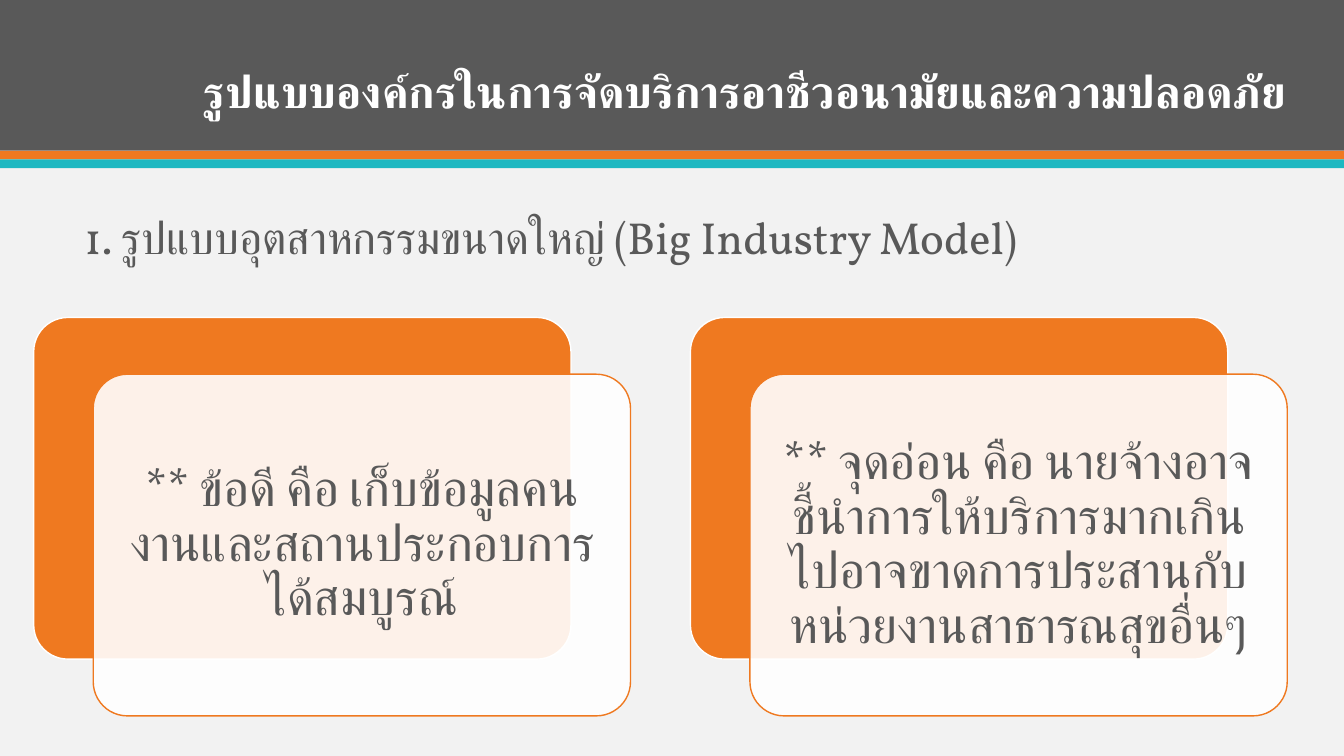
from dataclasses import dataclass

import pptx
import pptx.dml.color
import pptx.enum.shapes
import pptx.enum.text
import pptx.oxml
import pptx.oxml.ns
import pptx.util

Cm = pptx.util.Cm
Pt = pptx.util.Pt
Shape = pptx.enum.shapes.MSO_SHAPE
Align = pptx.enum.text.PP_ALIGN
Anchor = pptx.enum.text.MSO_ANCHOR


@dataclass(frozen=True)
class Theme:
    background: str = "F2F2F2"
    dark: str = "595959"
    orange: str = "EF7920"
    teal: str = "1EB8C1"
    white: str = "FFFFFF"
    title_font: str = "Roboto"
    body_font: str = "Vollkorn"
    heading_size: int = 32
    card_size: int = 36


def paint(fill, color, opacity=100):
    fill.solid()
    fill.fore_color.rgb = pptx.dml.color.RGBColor.from_string(color)
    if opacity < 100:
        color_node = fill._xPr.find(".//" + pptx.oxml.ns.qn("a:srgbClr"))
        alpha = pptx.oxml.parse_xml(
            f'<a:alpha {pptx.oxml.ns.nsdecls("a")} val="{opacity * 1000}"/>')
        color_node.append(alpha)


def write(frame, text, font, size, color, bold=False, align=Align.LEFT,
          anchor=Anchor.TOP, line_spacing=1.0, inset=None, indent=0):
    frame.word_wrap = True
    frame.vertical_anchor = anchor
    if inset is not None:
        frame.margin_left = frame.margin_right = Cm(inset)
        frame.margin_top = frame.margin_bottom = Cm(inset)
    para = frame.paragraphs[0]
    para.alignment = align
    para.line_spacing = line_spacing
    if indent:
        properties = para._p.get_or_add_pPr()
        properties.set("marL", str(Cm(indent)))
        properties.set("indent", "0")
    span = para.add_run()
    span.text = text
    span.font.name = font
    span.font.size = Pt(size)
    span.font.bold = bold
    span.font.color.rgb = pptx.dml.color.RGBColor.from_string(color)
    complex_font = pptx.oxml.parse_xml(
        f'<a:cs {pptx.oxml.ns.nsdecls("a")} typeface="{font}"/>')
    span.font._element.append(complex_font)


class SlideBuilder:
    def __init__(self, deck, theme):
        self.theme = theme
        self.slide = deck.slides.add_slide(deck.slide_layouts[5])
        paint(self.slide.background.fill, theme.background)

    def panel(self, shape_type, left, top, width, height, color,
              line=None, opacity=100):
        panel = self.slide.shapes.add_shape(
            shape_type, Cm(left), Cm(top), Cm(width), Cm(height))
        panel.shadow.inherit = False
        paint(panel.fill, color, opacity)
        if line:
            paint(panel.line.fill, line)
            panel.line.width = Pt(1)
        else:
            panel.line.fill.background()
        return panel

    def title(self, text, left, top, width, height):
        title = self.slide.shapes.title
        title.left, title.top = Cm(left), Cm(top)
        title.width, title.height = Cm(width), Cm(height)
        self.slide.shapes._spTree.append(title._element)
        title.text_frame.auto_size = pptx.enum.text.MSO_AUTO_SIZE.NONE
        write(title.text_frame, text, self.theme.title_font,
              self.theme.heading_size, self.theme.white, bold=True,
              anchor=Anchor.BOTTOM, line_spacing=0.9, indent=1.27)

    def heading(self, text, left, top, width, height):
        box = self.slide.shapes.add_textbox(
            Cm(left), Cm(top), Cm(width), Cm(height))
        write(box.text_frame, text, self.theme.body_font,
              self.theme.heading_size, self.theme.dark)

    def card(self, text, left, top):
        theme = self.theme
        width, height = 13.54, 8.61
        back = self.panel(Shape.ROUNDED_RECTANGLE, left, top, width, height,
                          theme.orange, line=theme.white)
        front = self.panel(Shape.ROUNDED_RECTANGLE, left + 1.5, top + 1.43,
                           width, height, theme.white, line=theme.orange,
                           opacity=90)
        for panel in (back, front):
            panel.adjustments[0] = 0.1
        write(front.text_frame, text, theme.body_font, theme.card_size,
              theme.dark, align=Align.CENTER, anchor=Anchor.MIDDLE,
              line_spacing=0.9, inset=0.38)


def main():
    deck = pptx.Presentation()
    deck.slide_width, deck.slide_height = Cm(33.87), Cm(19.05)
    theme = Theme()
    page = SlideBuilder(deck, theme)

    top = 0
    for height, color in ((3.8, theme.dark), (0.22, theme.orange),
                          (0.22, theme.teal)):
        page.panel(Shape.RECTANGLE, 0, top, 33.87, height, color)
        top += height

    page.title("รูปแบบองค์กรในการจัดบริการอาชีวอนามัยและความปลอดภัย",
               3.61, 0.71, 33.32, 2.39)

    cards = (
        "** ข้อดี คือ เก็บข้อมูลคนงานและสถานประกอบการได้สมบูรณ์",
        "** จุดอ่อน คือ นายจ้างอาจชี้นำการให้บริการมากเกินไป"
        "อาจขาดการประสานกับหน่วยงานสาธารณสุขอื่นๆ",
    )
    for index, text in enumerate(cards):
        page.card(text, 0.85 + index * 16.55, 8)

    page.heading("1. รูปแบบอุตสาหกรรมขนาดใหญ่ (Big Industry Model)",
                 1.88, 5.16, 30.96, 1.63)
    deck.save("out.pptx")


if __name__ == "__main__":
    main()
